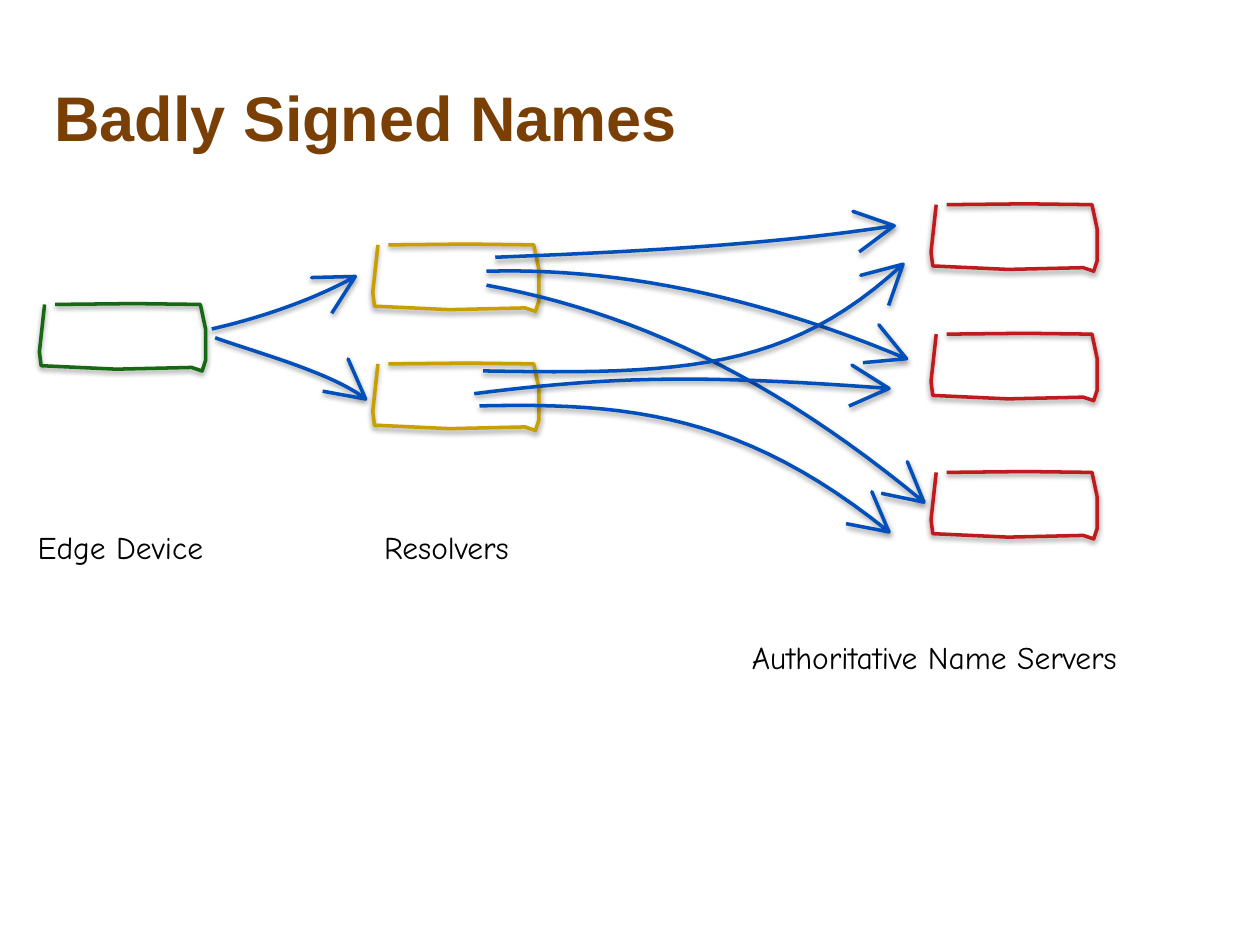
from math import atan2, cos, radians, sin

from lxml.etree import SubElement
from pptx import Presentation
from pptx.dml.color import RGBColor
from pptx.enum.text import MSO_ANCHOR, MSO_AUTO_SIZE, PP_ALIGN
from pptx.oxml.ns import qn
from pptx.util import Pt

BROWN, BLACK, BLUE = "793F05", "000000", "004FBA"

TIERS = [
    ("166813", 31.5, [174]),
    ("C7A000", 222, [140, 208]),
    ("C01B1C", 541, [117, 191, 270]),
]

BOX_OUTLINE = [
    (0, 0), (45, -0.5), (83, 0), (86, 14), (86, 32), (84, 38),
    (78, 36), (35, 37), (-8, 35), (-9, 27), (-6, 0),
]

LABELS = [
    ("Edge Device", 14.4, 298, 128),
    ("Resolvers", 212.4, 298, 104),
    ("Authoritative Name Servers", 422.6, 361, 281),
]

QUERIES = [
    [(278, 155), (350, 153), (430, 168), (518, 205)],
    [(278, 163), (360, 178), (440, 214), (528, 287)],
    [(271, 225), (350, 215), (400, 214), (508, 222)],
    [(274, 232), (360, 230), (425, 237), (508, 304)],
    [(283, 147), (360, 144), (440, 140), (511, 129)],
    [(276, 212), (390, 214), (450, 212), (516, 151)],
    [(121, 188), (148, 182), (180, 171), (203, 158)],
    [(123, 193), (145, 201), (190, 213), (209, 228)],
]


def color(hex_value):
    return RGBColor.from_string(hex_value)


def bezier(controls, steps=24):
    for step in range(steps + 1):
        t = step / steps
        weights = ((1 - t) ** 3, 3 * t * (1 - t) ** 2, 3 * t * t * (1 - t), t ** 3)
        yield tuple(sum(w * v for w, v in zip(weights, axis)) for axis in zip(*controls))


class Sketch:
    title_font = "Arial"
    label_font = "Comic Neue"
    stroke_width = 2
    barb_length = 25
    barb_angle = radians(28)

    def __init__(self, slide):
        self.slide = slide

    def style(self, paragraph, name, size, hex_value, bold=False):
        paragraph.alignment = PP_ALIGN.LEFT
        font = paragraph.font
        font.name, font.size, font.bold = name, Pt(size), bold
        font.color.rgb = color(hex_value)

    def title(self, text, left, top, width, height):
        title = self.slide.shapes.title
        title.left, title.top = Pt(left), Pt(top)
        title.width, title.height = Pt(width), Pt(height)
        frame = title.text_frame
        frame.margin_left = frame.margin_right = 0
        frame.margin_top = frame.margin_bottom = 0
        frame.vertical_anchor = MSO_ANCHOR.MIDDLE
        frame.text = text
        self.style(frame.paragraphs[0], self.title_font, 36, BROWN, bold=True)

    def label(self, text, left, top, width):
        label = self.slide.shapes.add_textbox(Pt(left), Pt(top), Pt(width), Pt(29))
        frame = label.text_frame
        frame.word_wrap = False
        frame.auto_size = MSO_AUTO_SIZE.SHAPE_TO_FIT_TEXT
        frame.text = text
        self.style(frame.paragraphs[0], self.label_font, 18, BLACK)

    def stroke(self, points, hex_value):
        start, *rest = [(Pt(x), Pt(y)) for x, y in points]
        builder = self.slide.shapes.build_freeform(*start)
        builder.add_line_segments(rest, close=False)
        stroke = builder.convert_to_shape()
        stroke.fill.background()
        stroke.line.color.rgb = color(hex_value)
        stroke.line.width = Pt(self.stroke_width)
        self.soft_shadow(stroke)

    def soft_shadow(self, shape):
        shape.shadow.inherit = False
        effects = shape.element.spPr.find(qn("a:effectLst"))
        shadow = SubElement(
            effects, qn("a:outerShdw"), blurRad=str(Pt(3.1)), dist=str(Pt(1.6)),
            dir="5400000", rotWithShape="0")
        tint = SubElement(shadow, qn("a:srgbClr"), val=BLACK)
        SubElement(tint, qn("a:alpha"), val="38000")

    def box(self, hex_value, left, top):
        self.stroke([(left + x, top + y) for x, y in BOX_OUTLINE], hex_value)

    def arrow(self, controls):
        (near_x, near_y), (tip_x, tip_y) = controls[-2:]
        heading = atan2(tip_y - near_y, tip_x - near_x)
        upper, lower = [
            (tip_x - self.barb_length * cos(heading + turn),
             tip_y - self.barb_length * sin(heading + turn))
            for turn in (self.barb_angle, -self.barb_angle)
        ]
        self.stroke([*bezier(controls), upper, controls[-1], lower], BLUE)


def main():
    deck = Presentation()
    deck.slide_width, deck.slide_height = Pt(720), Pt(540)
    sketch = Sketch(deck.slides.add_slide(deck.slide_layouts[5]))
    sketch.title("Badly Signed Names", 31, 21.6, 657.4, 90)
    for hex_value, left, tops in TIERS:
        for top in tops:
            sketch.box(hex_value, left, top)
    for label in LABELS:
        sketch.label(*label)
    for query in QUERIES:
        sketch.arrow(query)
    deck.save("out.pptx")


if __name__ == "__main__":
    main()
